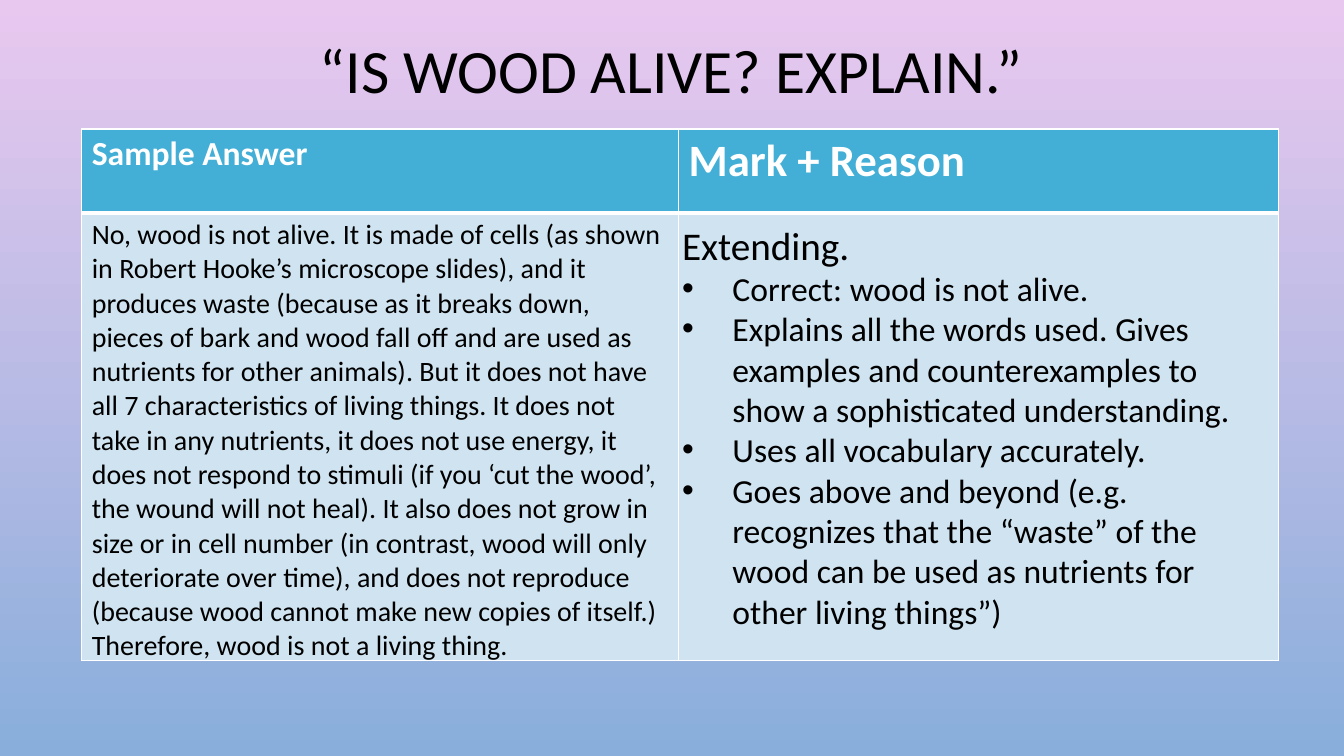
from lxml.etree import SubElement
from pptx import Presentation
from pptx.dml.color import RGBColor
from pptx.enum.text import MSO_ANCHOR, MSO_AUTO_SIZE, PP_ALIGN
from pptx.oxml.ns import qn
from pptx.util import Cm, Pt

PINK = RGBColor(0xE9, 0xC8, 0xEF)
BLUE = RGBColor(0x89, 0xAE, 0xDB)
HEADER_BLUE = RGBColor(0x43, 0xAF, 0xD6)
PALE_BLUE = RGBColor(0xCF, 0xE3, 0xF0)
WHITE = RGBColor(0xFF, 0xFF, 0xFF)
BLACK = RGBColor(0, 0, 0)

SAMPLE_ANSWER = (
    "No, wood is not alive. It is made of cells (as shown in Robert Hooke’s "
    "microscope slides), and it produces waste (because as it breaks down, "
    "pieces of bark and wood fall off and are used as nutrients for other "
    "animals). But it does not have all 7 characteristics of living things. "
    "It does not take in any nutrients, it does not use energy, it does not "
    "respond to stimuli (if you ‘cut the wood’, the wound will not heal). It "
    "also does not grow in size or in cell number (in contrast, wood will only "
    "deteriorate over time), and does not reproduce (because wood cannot make "
    "new copies of itself.) Therefore, wood is not a living thing."
)
REASONS = [
    "Correct: wood is not alive.",
    "Explains all the words used. Gives examples and counterexamples to show "
    "a sophisticated understanding.",
    "Uses all vocabulary accurately.",
    "Goes above and beyond (e.g. recognizes that the “waste” of the wood can "
    "be used as nutrients for other living things”)",
]


class SlideBuilder:
    font_name = "Calibri"

    def __init__(self, slide):
        self.slide = slide

    def background(self, top_color, bottom_color):
        fill = self.slide.background.fill
        fill.gradient()
        fill.gradient_angle = 270
        for stop, color, position in zip(
            fill.gradient_stops, (top_color, bottom_color), (0, 1)
        ):
            stop.color.rgb = color
            stop.position = position

    def format_runs(self, paragraph, size, color=BLACK, bold=False):
        for run in paragraph.runs:
            run.font.name = self.font_name
            run.font.size = Pt(size)
            run.font.color.rgb = color
            run.font.bold = bold

    def text_box(self, left, top, width, height):
        box = self.slide.shapes.add_textbox(Cm(left), Cm(top), Cm(width), Cm(height))
        box.text_frame.word_wrap = True
        return box.text_frame

    def title(self, text, left, top, width, height):
        frame = self.text_box(left, top, width, height)
        frame.vertical_anchor = MSO_ANCHOR.MIDDLE
        frame.text = text
        heading = frame.paragraphs[0]
        heading.alignment = PP_ALIGN.CENTER
        heading.line_spacing = 0.9
        self.format_runs(heading, 44)

    def bullet(self, paragraph):
        properties = paragraph._p.get_or_add_pPr()
        properties.set("marL", str(Cm(1.27)))
        properties.set("indent", str(-Cm(1.27)))
        SubElement(properties, qn("a:buFont"), typeface="Arial")
        SubElement(properties, qn("a:buChar"), char="•")

    def bulleted_text(self, lead, points, left, top, width, height):
        frame = self.text_box(left, top, width, height)
        frame.auto_size = MSO_AUTO_SIZE.SHAPE_TO_FIT_TEXT
        frame.text = lead
        self.format_runs(frame.paragraphs[0], 28)
        for point in points:
            paragraph = frame.add_paragraph()
            self.bullet(paragraph)
            paragraph.text = point
            self.format_runs(paragraph, 24)

    def borders(self, cell, top_width, bottom_width):
        properties = cell._tc.get_or_add_tcPr()
        widths = {"lnL": 1, "lnR": 1, "lnT": top_width, "lnB": bottom_width}
        for side, width in widths.items():
            line = SubElement(properties, qn(f"a:{side}"), w=str(Pt(width)))
            solid = SubElement(line, qn("a:solidFill"))
            SubElement(solid, qn("a:srgbClr"), val=str(WHITE))

    def table(self, rows, sizes, left, top, column_widths, row_heights):
        table = self.slide.shapes.add_table(
            len(rows), len(column_widths), Cm(left), Cm(top),
            Cm(sum(column_widths)), Cm(sum(row_heights)),
        ).table
        for column, width in zip(table.columns, column_widths):
            column.width = Cm(width)
        for r, height in enumerate(row_heights):
            table.rows[r].height = Cm(height)
            header = r == 0
            for c, text in enumerate(rows[r]):
                cell = table.cell(r, c)
                self.borders(cell, 1 if header else 3, 3 if header else 1)
                cell.fill.solid()
                cell.fill.fore_color.rgb = HEADER_BLUE if header else PALE_BLUE
                cell.text_frame.text = text
                self.format_runs(
                    cell.text_frame.paragraphs[0], sizes[r][c],
                    WHITE if header else BLACK, header,
                )


def main():
    presentation = Presentation()
    presentation.slide_width = Cm(33.87)
    presentation.slide_height = Cm(19.05)
    builder = SlideBuilder(presentation.slides.add_slide(presentation.slide_layouts[6]))
    builder.background(PINK, BLUE)
    builder.title("“IS WOOD ALIVE? EXPLAIN.”", 2.54, -0.36, 28.78, 4.45)
    builder.table(
        [["Sample Answer", "Mark + Reason"], [SAMPLE_ANSWER, ""]],
        [[24, 32], [20, 20]],
        2.06, 3.25, [15.04, 15.11], [2.11, 11.28],
    )
    builder.bulleted_text("Extending.", REASONS, 16.94, 5.44, 14.88, 10.69)
    presentation.save("out.pptx")


if __name__ == "__main__":
    main()
